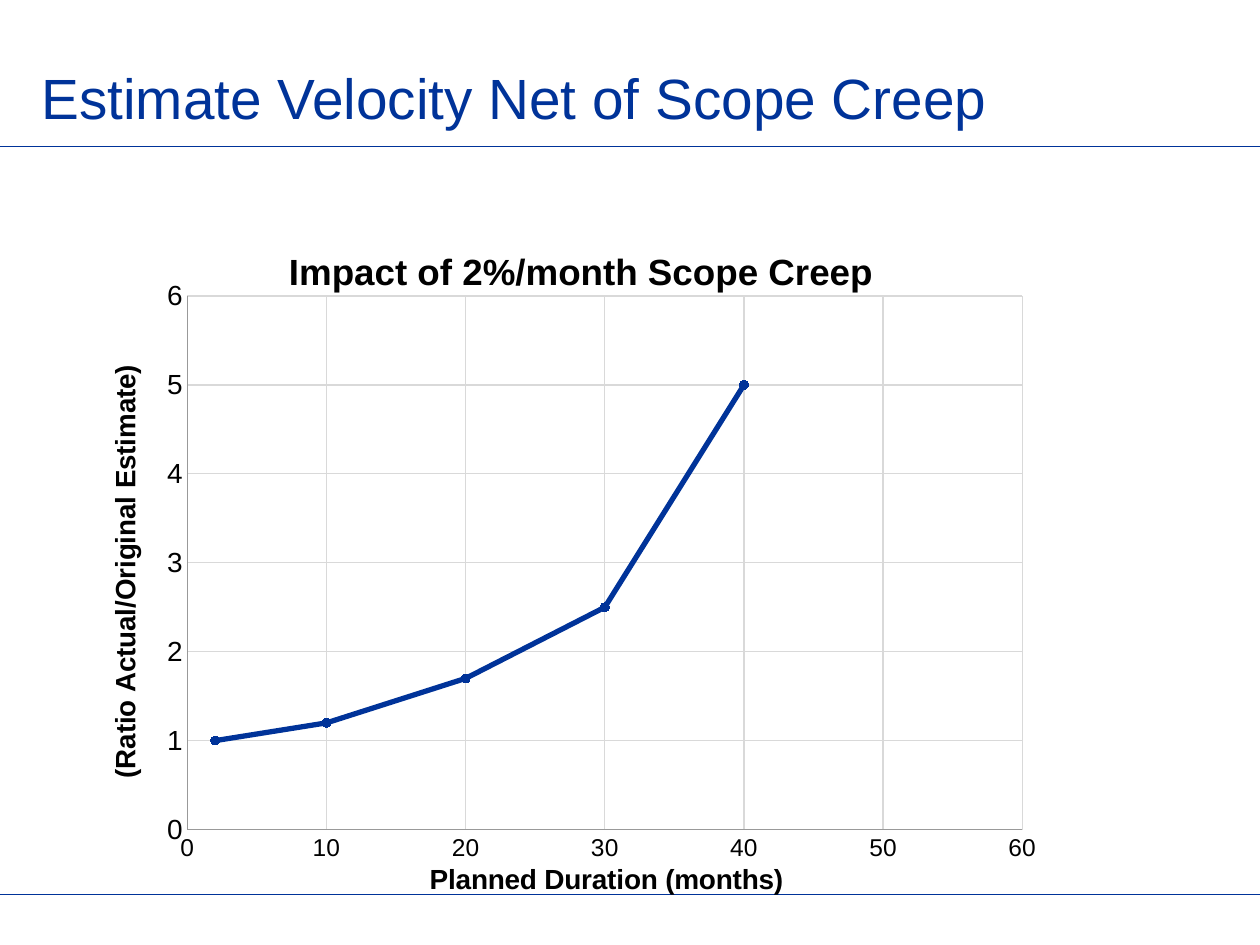
from lxml.etree import SubElement
from pptx import Presentation
from pptx.chart.data import XyChartData
from pptx.dml.color import RGBColor
from pptx.enum.chart import XL_CHART_TYPE, XL_MARKER_STYLE, XL_TICK_MARK
from pptx.enum.text import MSO_ANCHOR
from pptx.oxml import parse_xml
from pptx.oxml.ns import nsdecls, qn
from pptx.util import Inches, Pt

BLUE = RGBColor(0x00, 0x33, 0x99)
MARKER_BLUE = RGBColor(0x00, 0x31, 0x94)
BLACK = RGBColor(0x00, 0x00, 0x00)
AXIS_GRAY = RGBColor(0x99, 0x99, 0x99)
GRID_GRAY = RGBColor(0xD9, 0xD9, 0xD9)


def set_layout(parent, index, **values):
    """Place a chart part at fractions of the chart area."""
    for old in parent.findall(qn("c:layout")):
        parent.remove(old)
    layout = parse_xml(f"<c:layout {nsdecls('c')}><c:manualLayout/></c:layout>")
    for tag, value in values.items():
        SubElement(layout[0], qn(f"c:{tag}")).set("val", str(value))
    parent.insert(index, layout)


def set_title(owner_title, text, size, x, y):
    p = owner_title.text_frame.paragraphs[0]
    r = p.add_run()
    r.text = text
    for name, value in {"name": "Arial", "size": Pt(size), "bold": True}.items():
        setattr(r.font, name, value)
    r.font.color.rgb = BLACK
    set_layout(owner_title._element, 1, xMode="edge", yMode="edge", x=x, y=y)


prs = Presentation()
prs.slide_width, prs.slide_height = Inches(10), Inches(7.5)
s = prs.slides.add_slide(prs.slide_layouts[6])

for y in (1.16, 7.1):
    rule = s.shapes.add_connector(1, 0, Inches(y), Inches(10), Inches(y))
    rule.line.color.rgb = BLUE
    rule.line.width = Pt(0.5)
    SubElement(rule._element.spPr, qn("a:effectLst"))

heading = s.shapes.add_textbox(Inches(0.23), Inches(0.15), Inches(8.28), Inches(0.94))
tf = heading.text_frame
tf.word_wrap = True
tf.vertical_anchor = MSO_ANCHOR.BOTTOM
r = tf.paragraphs[0].add_run()
r.text = "Estimate Velocity Net of Scope Creep"
r.font.name, r.font.size = "Arial", Pt(32.4)
r.font.color.rgb = BLUE

data = XyChartData()
points = data.add_series("Series 1")
for months, ratio in [(2, 1), (10, 1.2), (20, 1.7), (30, 2.5), (40, 5)]:
    points.add_data_point(months, ratio)
chart = s.shapes.add_chart(XL_CHART_TYPE.XY_SCATTER_LINES, Inches(0.81), Inches(1.76),
                           Inches(7.53), Inches(5.41), data).chart
chart.has_legend = False
chart.font.name, chart.font.size = "Arial", Pt(10)
chart.font.color.rgb = BLACK
set_title(chart.chart_title, "Impact of 2%/month Scope Creep", 21, 0.19, 0.03)
plot = chart.plots[0]
plot.vary_by_categories = False
set_layout(chart._chartSpace.chart.plotArea, 0, layoutTarget="inner", xMode="edge",
           yMode="edge", x=0.09, y=0.11, w=0.88, h=0.79)

for axis, title, size, top, step, x, y in (
    (chart.category_axis, "Planned Duration (months)", 14, 60, 10, 0.34, 0.94),
    (chart.value_axis, "(Ratio Actual/Original Estimate)", 16, 6, 1, 0, 0.21),
):
    set_title(axis.axis_title, title, 16, x, y)
    formats = {"minimum_scale": 0, "maximum_scale": top, "major_unit": step,
               "major_tick_mark": XL_TICK_MARK.NONE, "minor_tick_mark": XL_TICK_MARK.NONE,
               "has_major_gridlines": True}
    for name, value in formats.items():
        setattr(axis, name, value)
    labels = axis.tick_labels
    labels.number_format, labels.number_format_is_linked = "0", False
    labels.font.name, labels.font.size = "Arial", Pt(size)
    labels.font.color.rgb = BLACK
    for line, color in ((axis.format.line, AXIS_GRAY),
                        (axis.major_gridlines.format.line, GRID_GRAY)):
        line.color.rgb = color
        line.width = Pt(0.75)
# Vertical axis title reads upwards
chart.value_axis.axis_title.text_frame._txBody.bodyPr.set("rot", "-5400000")

series = plot.series[0]
series.smooth = False
series.format.line.color.rgb = BLUE
series.format.line.width = Pt(3)
marker = series.marker
marker.style, marker.size = XL_MARKER_STYLE.CIRCLE, 5
marker.format.fill.solid()
marker.format.fill.fore_color.rgb = MARKER_BLUE
marker.format.line.color.rgb = MARKER_BLUE

prs.save("out.pptx")
